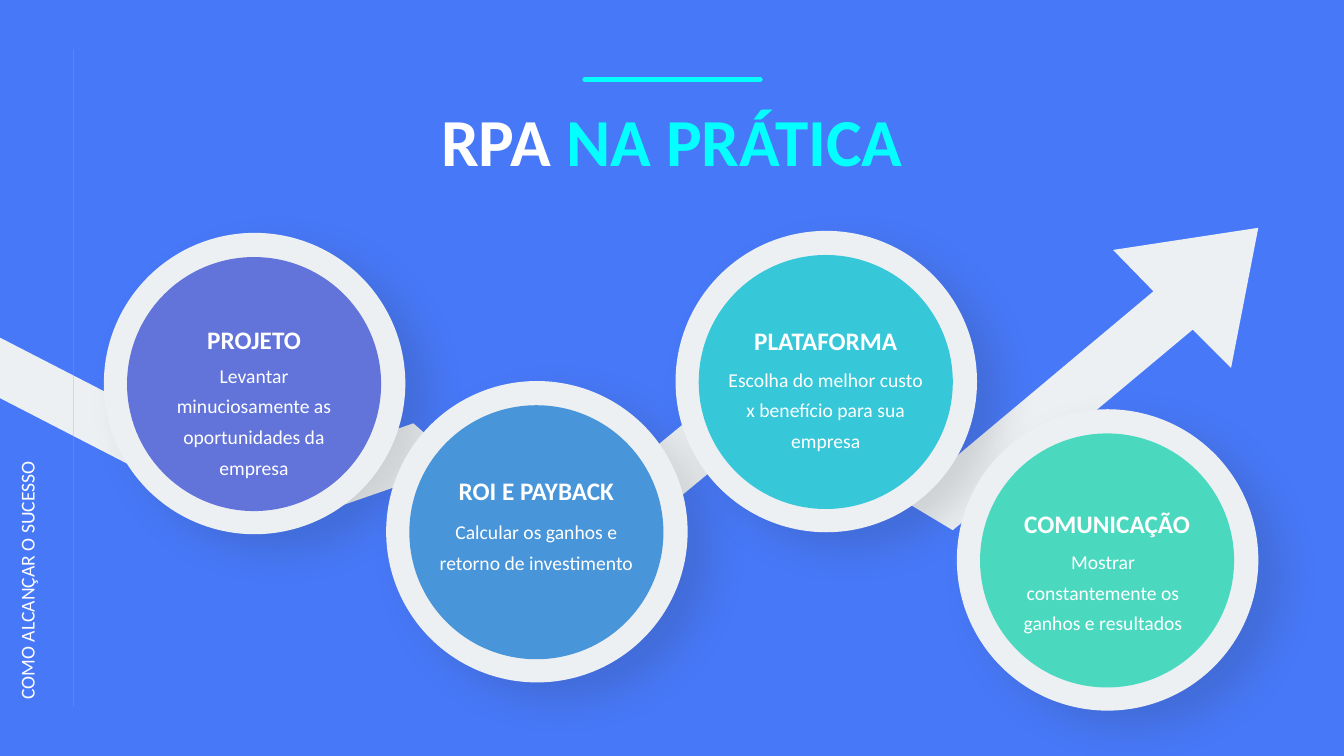
from lxml.etree import SubElement
from pptx import Presentation
from pptx.dml.color import RGBColor
from pptx.enum.shapes import MSO_CONNECTOR as CONNECTOR, MSO_SHAPE as SHAPE
from pptx.enum.text import MSO_AUTO_SIZE as AUTO_SIZE, PP_ALIGN as ALIGN
from pptx.oxml import parse_xml
from pptx.oxml.ns import nsdecls, qn
from pptx.util import Pt

PX = 9144  # 100 px to the inch
BLUE = RGBColor(0x47, 0x78, 0xF7)
CYAN = RGBColor(0x03, 0xFF, 0xFF)
WHITE = RGBColor(0xFF, 0xFF, 0xFF)
PALE = RGBColor(0xEC, 0xF0, 0xF3)
GREY = RGBColor(0xA6, 0xA6, 0xA6)
VIOLET = RGBColor(0x62, 0x73, 0xD9)
SKY = RGBColor(0x48, 0x95, 0xD9)
TURQUOISE = RGBColor(0x36, 0xC8, 0xD9)
GREEN = RGBColor(0x4A, 0xD9, 0xBF)

RING, DISC = 299, 252
INSET = (RING - DISC) // 2

prs = Presentation()
prs.slide_width, prs.slide_height = 1333 * PX, 750 * PX
slide = prs.slides.add_slide(prs.slide_layouts[6])
slide.background.fill.solid()
slide.background.fill.fore_color.rgb = BLUE
shapes = slide.shapes


def add_text(box, runs, size, bold=False, align=ALIGN.CENTER, spacing=1.0, wrap=True):
    label = shapes.add_textbox(*(n * PX for n in box))
    frame = label.text_frame
    frame.word_wrap = wrap
    frame.auto_size = AUTO_SIZE.SHAPE_TO_FIT_TEXT
    paragraph = frame.paragraphs[0]
    paragraph.alignment = align
    paragraph.line_spacing = spacing
    for text, color in runs:
        run = paragraph.add_run()
        run.text = text
        run.font.name = "Calibri"
        run.font.size = Pt(size)
        run.font.bold = bold
        run.font.color.rgb = color
    return label


def paint(shape, color):
    shape.shadow.inherit = False
    shape.fill.solid()
    shape.fill.fore_color.rgb = color
    shape.line.fill.background()


# Zigzag arrow behind the steps
outline = [(1104, 248), (1248, 226), (1221, 365), (1183, 327), (945, 526), (765, 418),
           (539, 605), (398, 481), (260, 529), (0, 395), (0, 335), (264, 471),
           (410, 420), (540, 534), (760, 353), (940, 460), (1144, 289)]
builder = shapes.build_freeform(*outline[0], scale=PX)
builder.add_line_segments(outline[1:], close=True)
paint(builder.convert_to_shape(), PALE)

# Title
add_text((224, 94, 885, 91), [("RPA ", WHITE), ("NA PRÁTICA", CYAN)], 48, bold=True)

# Steps: ring position, heading top, body left and top, body height
steps = [
    ("PROJETO", "Levantar minuciosamente as oportunidades da empresa",
     VIOLET, 103, 231, 317, 145, 349, 131),
    ("ROI E PAYBACK", "Calcular os ganhos e retorno de investimento",
     SKY, 383, 378, 467, 425, 504, 100),
    ("PLATAFORMA", "Escolha do melhor custo x benefício para sua empresa",
     TURQUOISE, 670, 229, 318, 712, 353, 100),
    ("COMUNICAÇÃO", "Mostrar constantemente os ganhos e resultados",
     GREEN, 949, 406, 499, 987, 534, 100),
]
for heading, body, color, left, top, heading_top, body_left, body_top, body_height in steps:
    ring = shapes.add_shape(SHAPE.OVAL, left * PX, top * PX, RING * PX, RING * PX)
    paint(ring, PALE)
    ring._element.spPr.find(qn("a:effectLst")).append(parse_xml(
        f'<a:outerShdw {nsdecls("a")} blurRad="{Pt(28)}" dist="{Pt(20)}" dir="{36 * 60000}" '
        'algn="ctr" rotWithShape="0"><a:srgbClr val="262626"><a:alpha val="15000"/>'
        '</a:srgbClr></a:outerShdw>'))
    disc = shapes.add_shape(SHAPE.OVAL, (left + INSET) * PX, (top + INSET + 1) * PX,
                            DISC * PX, DISC * PX)
    paint(disc, color)
    add_text((body_left, body_top, 214, body_height), [(body, WHITE)], 14, spacing=1.3)
    add_text((left + 16, heading_top, 266, 40), [(heading, WHITE)], 18, bold=True)

# Accent above the title and faint rule at the left
for x1, y1, x2, y2, color, width, alpha in [(580, 79, 754, 79, CYAN, 3.5, 100),
                                            (73, 49, 73, 701, GREY, 0.5, 30)]:
    rule = shapes.add_connector(CONNECTOR.STRAIGHT, x1 * PX, y1 * PX, x2 * PX, y2 * PX)
    rule.line.color.rgb = color
    rule.line.width = Pt(width)
    properties = rule._element.spPr
    stroke = properties.find(qn("a:ln"))
    stroke.set("cap", "rnd")
    SubElement(stroke.find(".//" + qn("a:srgbClr")), qn("a:alpha"), val=str(alpha * 1000))
    SubElement(properties, qn("a:effectLst"))

# Vertical side caption
caption = add_text((-123, 537, 300, 34), [("COMO ALCANÇAR O SUCESSO", WHITE)], 14,
                   align=ALIGN.LEFT, wrap=False)
caption.rotation = 270

prs.save("out.pptx")
